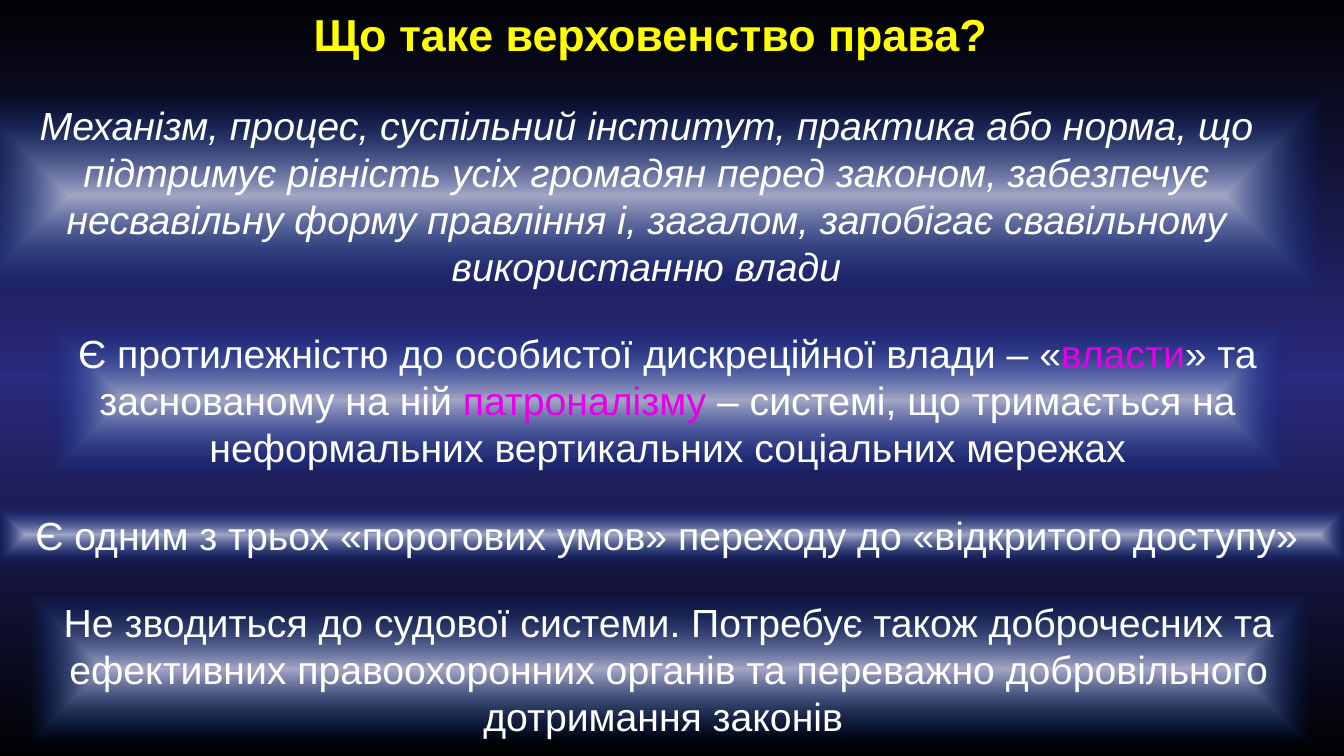
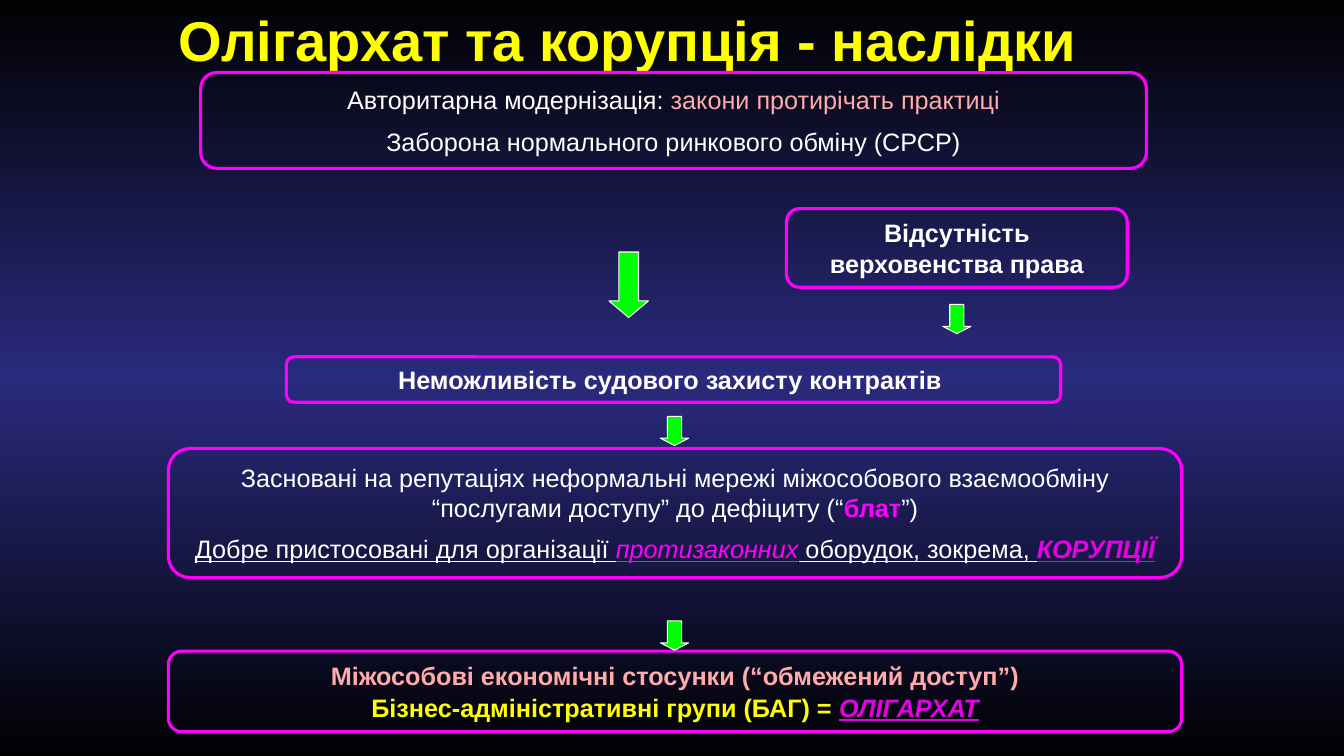
from dataclasses import dataclass, field

from pptx import Presentation
from pptx.dml.color import RGBColor
from pptx.enum.shapes import MSO_SHAPE as Form
from pptx.enum.text import MSO_ANCHOR as Anchor, MSO_AUTO_SIZE as Fit, PP_ALIGN as Align
from pptx.oxml import parse_xml
from pptx.oxml.ns import nsdecls, qn
from pptx.util import Inches, Pt

# Shared look
FONT = "Arial"
WHITE, YELLOW, GREEN = "FFFFFF", "FFFF00", "00FF00"
PINK, PLUM, ROSE = "FF00FF", "E700E7", "FFABAB"
NIGHT, INDIGO = "010103", "2A2A7E"
GLOW, HAZE = "A4A7C6", "003399"
DOWN = '<a:lin ang="5400000" scaled="0"/>'
CORE = '<a:path path="shape"><a:fillToRect l="50000" t="50000" r="50000" b="50000"/></a:path>'

Place = tuple[float, float, float, float]


@dataclass
class Run:
    text: str
    color: str = WHITE
    form: dict = field(default_factory=dict)


@dataclass
class Box:
    at: Place
    paras: list[list[Run]]
    gap: float = 8


@dataclass
class Arrow:
    at: Place
    head: float


BOLD = {"bold": True}
ITAL = {"italic": True}
LINED = {"underline": True}


def paint(color: str) -> RGBColor:
    return RGBColor.from_string(color)


def blend(owner, root, stops: list[tuple[int, str, int]], course: str) -> None:
    """Give the owner a gradient; stops are place, colour and opacity in percent."""
    owner.fill.gradient()
    marks = "".join(
        f'<a:gs pos="{pos * 1000}"><a:srgbClr val="{color}">'
        f'<a:alpha val="{alpha * 1000}"/></a:srgbClr></a:gs>'
        for pos, color, alpha in stops)
    old = root.find(".//" + qn("a:gradFill"))
    new = parse_xml(f'<a:gradFill {nsdecls("a")} rotWithShape="1">'
                    f"<a:gsLst>{marks}</a:gsLst>{course}</a:gradFill>")
    old.getparent().replace(old, new)


def write(shape, paras: list[list[Run]], size: float, align: Align, gap: float = 0) -> None:
    frame = shape.text_frame
    look = {"word_wrap": True, "auto_size": Fit.NONE, "vertical_anchor": Anchor.MIDDLE,
            "margin_left": Inches(0.1), "margin_right": Inches(0.1),
            "margin_top": Inches(0.05), "margin_bottom": Inches(0.05)}
    for name, value in look.items():
        setattr(frame, name, value)
    for num, runs in enumerate(paras):
        para = frame.add_paragraph() if num else frame.paragraphs[0]
        para.alignment = align
        para.space_before = Pt(gap if num else 0)
        for run in runs:
            part = para.add_run()
            part.text = run.text
            part.font.color.rgb = paint(run.color)
            for name, value in {"name": FONT, "size": Pt(size), **run.form}.items():
                setattr(part.font, name, value)


def add_form(slide, kind: Form, at: Place):
    shape = slide.shapes.add_shape(kind, *map(Inches, at))
    shape.shadow.inherit = False
    return shape


def edge(shape, color: str, width: float) -> None:
    shape.line.color.rgb = paint(color)
    shape.line.width = Pt(width)


def add_slide(deck, text: str, at: Place, size: float):
    slide = deck.slides.add_slide(deck.slide_layouts[5])
    title = slide.shapes.title
    for name, value in zip(("left", "top", "width", "height"), at):
        setattr(title, name, Inches(value))
    write(title, [[Run(text, YELLOW, BOLD)]], size, Align.LEFT)
    return slide


def add_band(slide, box: Box) -> None:
    shape = add_form(slide, Form.RECTANGLE, box.at)
    blend(shape, shape.element, [(0, GLOW, 100), (100, HAZE, 0)], CORE)
    shape.line.fill.background()
    write(shape, box.paras, 28, Align.CENTER)


def add_frame(slide, box: Box) -> None:
    shape = add_form(slide, Form.ROUNDED_RECTANGLE, box.at)
    shape.adjustments[0] = 0.167
    shape.fill.background()
    edge(shape, PINK, 2.25)
    write(shape, box.paras, 18, Align.CENTER, box.gap)


def add_arrow(slide, arrow: Arrow) -> None:
    shape = add_form(slide, Form.DOWN_ARROW, arrow.at)
    shape.adjustments[0] = 0.5
    shape.adjustments[1] = arrow.head
    shape.fill.solid()
    shape.fill.fore_color.rgb = paint(GREEN)
    edge(shape, WHITE, 0.75)


# Rule of law: statements on glowing bands
BANDS = [
    Box((-0.31, 0.94, 13.44, 1.99), [[
        Run("Механізм, процес, суспільний інститут, практика або норма, що підтримує "
            "рівність усіх громадян перед законом, забезпечує несвавільну форму правління "
            "і, загалом, запобігає свавільному використанню влади", WHITE, ITAL)]]),
    Box((0.48, 3.21, 12.28, 1.51), [[
        Run("Є протилежністю до особистої дискреційної влади – «"),
        Run("власти", PLUM),
        Run("» та заснованому на ній "),
        Run("патроналізму", PLUM),
        Run(" – системі, що тримається на неформальних вертикальних соціальних мережах")]]),
    Box((-0.03, 5.02, 13.39, 0.57), [[
        Run("Є одним з трьох «порогових умов» переходу до «відкритого доступу» ")]]),
    Box((0.27, 5.88, 12.72, 1.51), [[
        Run("Не зводиться до судової системи. Потребує також доброчесних та ефективних "
            "правоохоронних органів та переважно добровільного дотримання законів ")]]),
]

# Oligarchy: chain of causes, top to bottom
FRAMES = [
    Box((1.99, 0.72, 9.38, 0.95), [
        [Run("Авторитарна модернізація: "), Run("закони протирічать практиці", ROSE)],
        [Run("Заборона нормального ринкового обміну (СРСР)")]]),
    Box((7.8, 2.07, 3.38, 0.78), [[Run("Відсутність верховенства права", WHITE, BOLD)]]),
    Box((2.84, 3.54, 7.68, 0.45), [
        [Run("Неможливість судового захисту контрактів ", WHITE, BOLD)]]),
    Box((1.67, 4.45, 10.05, 1.28), [
        [Run("Засновані на репутаціях неформальні мережі міжособового взаємообміну "
             "“послугами доступу” до дефіциту (“"),
         Run("блат", PINK, BOLD), Run("”)")],
        [Run("Добре пристосовані для організації ", WHITE, LINED),
         Run("протизаконних", PINK, LINED | ITAL),
         Run(" оборудок, зокрема, ", WHITE, LINED),
         Run("КОРУПЦІЇ", PLUM, LINED | ITAL | BOLD)]]),
    Box((1.67, 6.46, 10.05, 0.8), [
        [Run("Міжособові економічні стосунки (“обмежений доступ”)", ROSE, BOLD)],
        [Run("Бізнес-адміністративні групи (БАГ) = ", YELLOW, BOLD),
         Run("ОЛІГАРХАТ", PLUM, BOLD | ITAL | LINED)]], gap=1),
]
SMALL = [(9.35, 3.02), (6.55, 4.13), (6.55, 6.16)]
ARROWS = [Arrow((6.04, 2.5, 0.39, 0.65), 0.42)]
ARROWS += [Arrow((left, top, 0.28, 0.29), 0.26) for left, top in SMALL]


def main() -> None:
    deck = Presentation()
    deck.slide_width, deck.slide_height = Inches(13.33), Inches(7.5)
    master = deck.slide_master
    blend(master.background, master.element,
          [(0, NIGHT, 100), (50, INDIGO, 100), (100, NIGHT, 100)], DOWN)

    law = add_slide(deck, "Що таке верховенство права?", (3.01, 0.01, 6.97, 0.64), 32)
    for box in BANDS:
        add_band(law, box)

    chain = add_slide(deck, "Олігархат та корупція - наслідки", (1.67, 0, 10.2, 0.77), 40)
    for box in FRAMES:
        add_frame(chain, box)
    for arrow in ARROWS:
        add_arrow(chain, arrow)

    deck.save("out.pptx")


if __name__ == "__main__":
    main()
